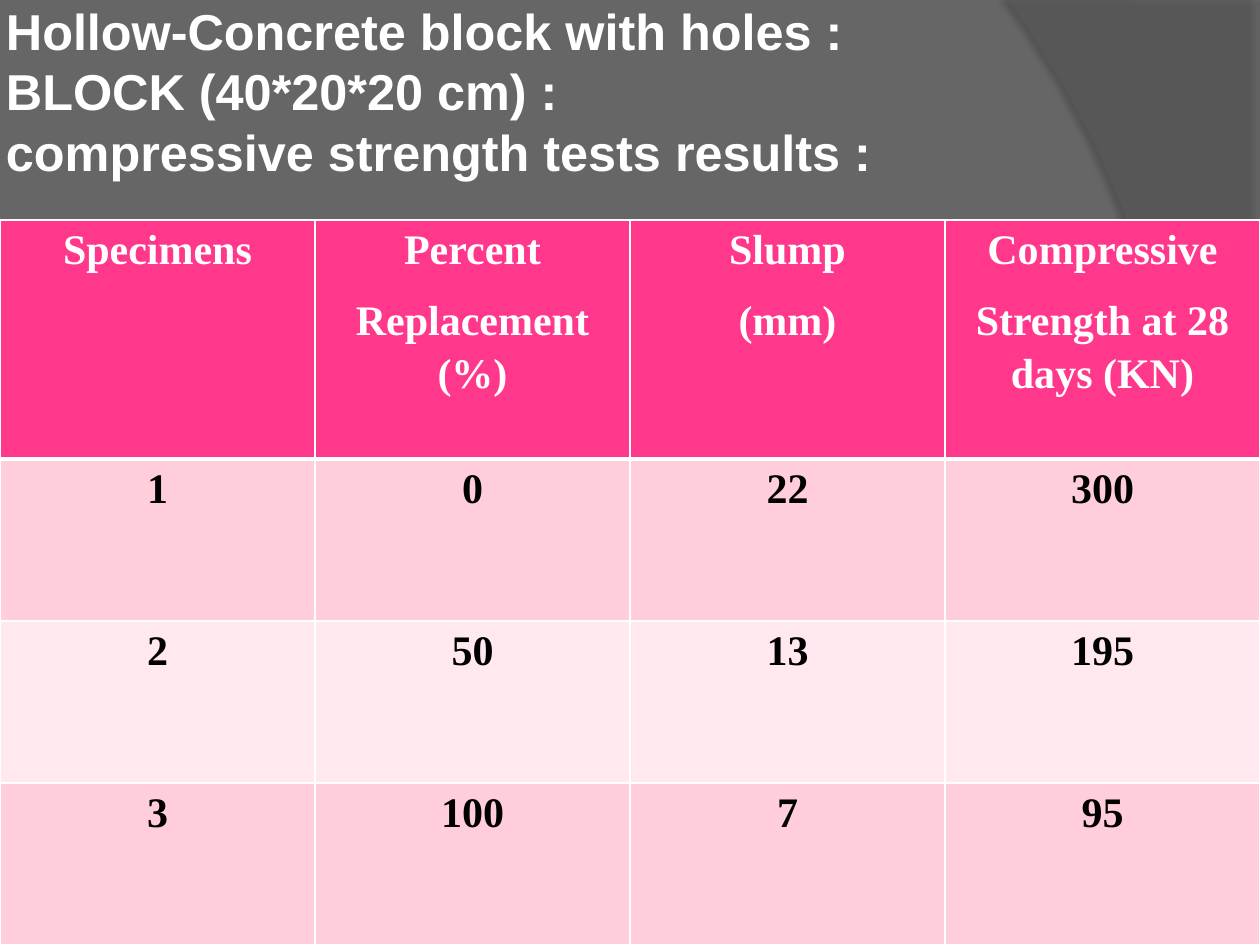
from dataclasses import dataclass

from lxml import etree
from pptx import Presentation
from pptx.dml.color import RGBColor
from pptx.enum.text import MSO_ANCHOR, PP_ALIGN
from pptx.oxml.ns import qn
from pptx.util import Emu, Pt

EMU_PER_PX = 914400 / 126
SLIDE_WIDTH, SLIDE_HEIGHT = 1260, 945
CENTER, TOP = PP_ALIGN.CENTER, MSO_ANCHOR.TOP

BACKGROUND = RGBColor(0x66, 0x66, 0x66)
BAND = RGBColor(0x5E, 0x5E, 0x5E)
BLACK = RGBColor(0, 0, 0)
WHITE = RGBColor(0xFF, 0xFF, 0xFF)
PINK = RGBColor(0xFF, 0x38, 0x8C)
PINK_MEDIUM = RGBColor(0xFF, 0xCE, 0xDA)
PINK_LIGHT = RGBColor(0xFF, 0xE8, 0xEE)

TITLE_LINES = [
    "Hollow-Concrete block with holes :",
    "BLOCK (40*20*20 cm) :",
    "compressive strength tests results :",
]
COLUMN_WIDTH = 315


@dataclass
class Row:
    height: int
    fill: RGBColor
    color: RGBColor
    cells: list[list[str]]  # each cell is a list of paragraphs
    top_border: int = 1
    bottom_border: int = 1


ROWS = [
    Row(239, PINK, WHITE, [
        ["Specimens"],
        ["Percent", "Replacement (%)"],
        ["Slump", "(mm)"],
        ["Compressive", "Strength at 28 days (KN)"],
    ], bottom_border=3),
    Row(162, PINK_MEDIUM, BLACK, [["1"], ["0"], ["22"], ["300"]], top_border=3),
    Row(162, PINK_LIGHT, BLACK, [["2"], ["50"], ["13"], ["195"]]),
    Row(162, PINK_MEDIUM, BLACK, [["3"], ["100"], ["7"], ["95"]]),
]


def px(length: int) -> Emu:
    return Emu(round(length * EMU_PER_PX))


def add_run(paragraph, text: str, font_name: str, size: float, color: RGBColor) -> None:
    run = paragraph.add_run()
    run.text = text
    run.font.name = font_name
    run.font.size = Pt(size)
    run.font.bold = True
    run.font.color.rgb = color


def curve_points(p0, p1, p2, p3, steps: int = 40) -> list[tuple[float, float]]:
    """Points along a cubic curve, without its start."""
    points = []
    for step in range(1, steps + 1):
        t = step / steps
        weights = ((1 - t) ** 3, 3 * t * (1 - t) ** 2, 3 * t * t * (1 - t), t ** 3)
        points.append(tuple(sum(w * p[axis] for w, p in zip(weights, (p0, p1, p2, p3)))
                            for axis in (0, 1)))
    return points


def add_alpha(color_element, percent: int) -> None:
    etree.SubElement(color_element, qn("a:alpha"), val=str(percent * 1000))


def add_band(slide) -> None:
    curve_start = (1034, 945)
    builder = slide.shapes.build_freeform(1260, 2, scale=EMU_PER_PX)
    builder.add_line_segments(
        [(1260, 945), curve_start,
         *curve_points(curve_start, (1178, 780), (1283, 378), (1008, 0))])
    band = builder.convert_to_shape()
    band.line.fill.background()
    band.fill.solid()
    band.fill.fore_color.rgb = BAND
    properties = band.fill._xPr
    add_alpha(properties.find(qn("a:solidFill"))[0], 40)
    # Soft shadow to the left
    band.shadow.inherit = False
    shadow = etree.SubElement(
        properties.find(qn("a:effectLst")), qn("a:outerShdw"),
        blurRad=str(Pt(4)), dist=str(Pt(4)), dir="10800000", rotWithShape="0")
    add_alpha(etree.SubElement(shadow, qn("a:srgbClr"), val=str(BLACK)), 45)


def add_title(slide) -> None:
    frame = slide.shapes.add_textbox(0, 0, px(SLIDE_WIDTH), px(236)).text_frame
    frame.word_wrap = True
    frame.vertical_anchor = TOP
    frame.margin_left = frame.margin_right = px(6)
    frame.margin_top = frame.margin_bottom = 0
    paragraph = frame.paragraphs[0]
    paragraph.line_spacing = Pt(34.5)
    for index, line in enumerate(TITLE_LINES):
        if index:
            paragraph.add_line_break()
        add_run(paragraph, line, "Arial", 28.8, WHITE)


def set_borders(cell, row: Row) -> None:
    widths = {"a:lnL": 1, "a:lnR": 1, "a:lnT": row.top_border, "a:lnB": row.bottom_border}
    properties = cell._tc.get_or_add_tcPr()
    for index, (side, width) in enumerate(widths.items()):
        border = etree.Element(qn(side), w=str(Pt(width)))
        fill = etree.SubElement(border, qn("a:solidFill"))
        etree.SubElement(fill, qn("a:srgbClr"), val=str(WHITE))
        properties.insert(index, border)


def fill_cell(cell, row: Row, lines: list[str]) -> None:
    cell.margin_left = cell.margin_right = px(9)
    cell.margin_top = cell.margin_bottom = 0
    cell.vertical_anchor = TOP
    cell.fill.solid()
    cell.fill.fore_color.rgb = row.fill
    set_borders(cell, row)
    frame = cell.text_frame
    for index, line in enumerate(lines):
        paragraph = frame.add_paragraph() if index else frame.paragraphs[0]
        paragraph.alignment = CENTER
        paragraph.line_spacing = 1.15
        paragraph.space_after = Pt(10)
        add_run(paragraph, line, "Times New Roman", 24, row.color)


def add_results_table(slide) -> None:
    column_count = len(ROWS[0].cells)
    table = slide.shapes.add_table(
        len(ROWS), column_count, 0, px(220), px(SLIDE_WIDTH),
        px(sum(row.height for row in ROWS))).table
    for column in table.columns:
        column.width = px(COLUMN_WIDTH)
    for row_index, row in enumerate(ROWS):
        table.rows[row_index].height = px(row.height)
        for column_index, lines in enumerate(row.cells):
            fill_cell(table.cell(row_index, column_index), row, lines)


def main() -> None:
    presentation = Presentation()
    presentation.slide_width = px(SLIDE_WIDTH)
    presentation.slide_height = px(SLIDE_HEIGHT)
    slide = presentation.slides.add_slide(presentation.slide_layouts[6])
    slide.background.fill.solid()
    slide.background.fill.fore_color.rgb = BACKGROUND

    add_band(slide)
    add_title(slide)
    add_results_table(slide)
    presentation.save("out.pptx")


if __name__ == "__main__":
    main()
